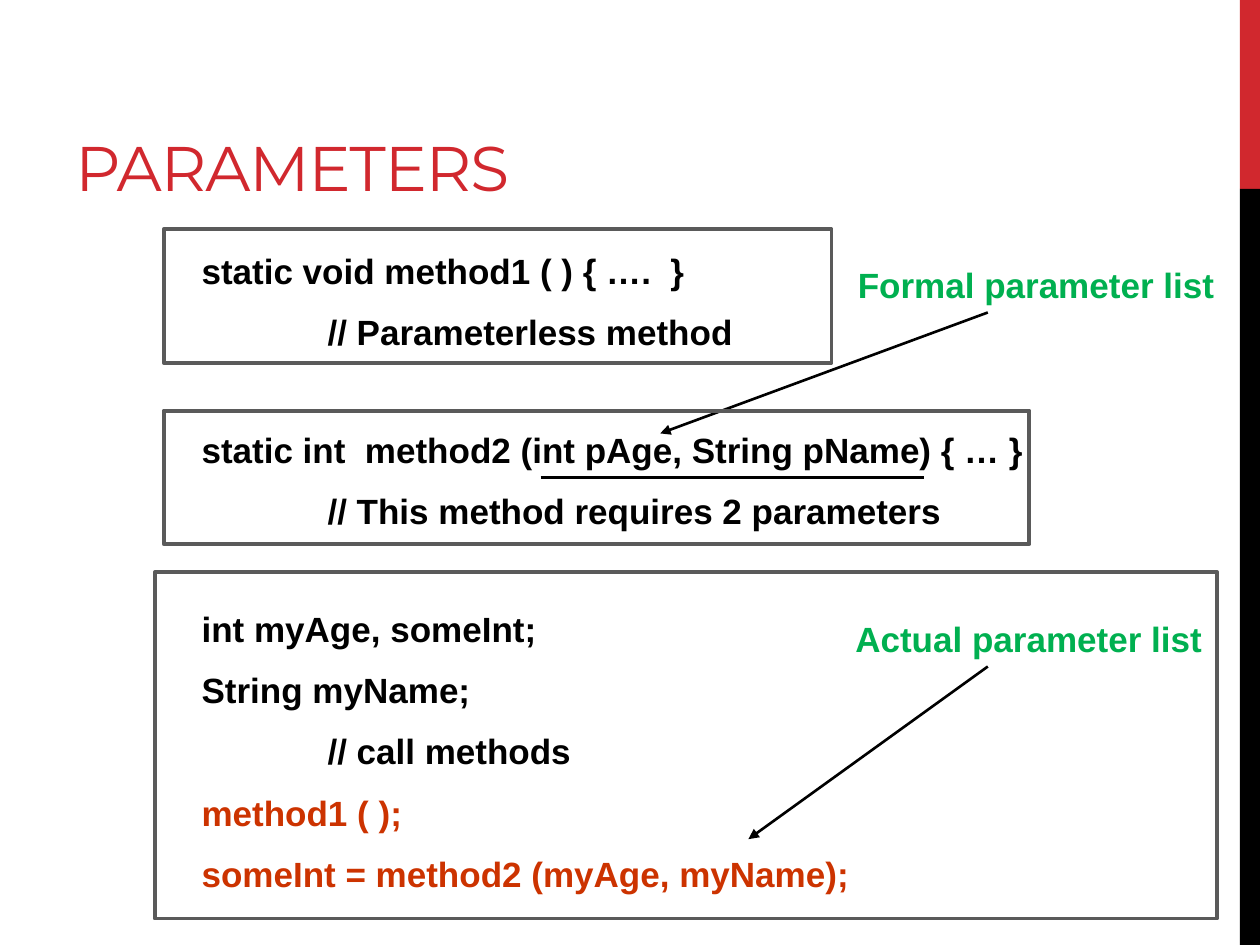
from lxml import etree
from pptx import Presentation
from pptx.dml.color import RGBColor
from pptx.enum.shapes import MSO_CONNECTOR, MSO_SHAPE
from pptx.enum.text import MSO_ANCHOR, PP_ALIGN
from pptx.oxml.ns import qn
from pptx.util import Inches, Pt

RECTANGLE = MSO_SHAPE.RECTANGLE
STRAIGHT = MSO_CONNECTOR.STRAIGHT
LEFT = PP_ALIGN.LEFT
TOP, BOTTOM = MSO_ANCHOR.TOP, MSO_ANCHOR.BOTTOM

RED = RGBColor(0xD1, 0x28, 0x2E)
BLACK = RGBColor(0x00, 0x00, 0x00)
GREEN = RGBColor(0x00, 0xB0, 0x50)
ORANGE = RGBColor(0xCC, 0x33, 0x00)
GRAY = RGBColor(0x5A, 0x5A, 0x5A)

COMMENT_INDENT = 1.0
CODE_LEFT = 1.6

# Each code line: text, indent in inches, colour
METHOD1 = [
    ("static void method1 ( ) { ….  }", 0, BLACK),
    ("// Parameterless method", COMMENT_INDENT, BLACK),
]
METHOD2 = [
    ("static int  method2 (int pAge, String pName) { … }", 0, BLACK),
    ("// This method requires 2 parameters", COMMENT_INDENT, BLACK),
]
CALLS = [
    ("int myAge, someInt;", 0, BLACK),
    ("String myName;", 0, BLACK),
    ("// call methods", COMMENT_INDENT, BLACK),
    ("method1 ( );", 0, ORANGE),
    ("someInt = method2 (myAge, myName);", 0, ORANGE),
]


def write(paragraph, text, size=20, font="Arial", color=BLACK, bold=True,
          indent=0, after=0, spacing=None):
    """Write one formatted run into a paragraph."""
    paragraph.alignment = LEFT
    paragraph.space_after = Pt(after)
    if indent:
        paragraph._p.get_or_add_pPr().set("marL", str(Inches(indent)))
    run = paragraph.add_run()
    run.text = text
    run.font.size = Pt(size)
    run.font.name = font
    run.font.bold = bold
    run.font.color.rgb = color
    if spacing is not None:
        run._r.get_or_add_rPr().set("spc", str(round(spacing * 100)))


def add_rectangle(slide, box, fill=None, line=None):
    rectangle = slide.shapes.add_shape(RECTANGLE, *map(Inches, box))
    rectangle.shadow.inherit = False
    if fill is None:
        rectangle.fill.background()
    else:
        rectangle.fill.solid()
        rectangle.fill.fore_color.rgb = fill
    if line is None:
        rectangle.line.fill.background()
    else:
        rectangle.line.color.rgb = line
        rectangle.line.width = Pt(2.25)
    return rectangle


def add_line(slide, start, end, arrow=False):
    line = slide.shapes.add_connector(STRAIGHT, *map(Inches, start + end))
    line.line.color.rgb = BLACK
    line.line.width = Pt(1.5)
    if arrow:
        etree.SubElement(line.line._get_or_add_ln(), qn("a:tailEnd"), type="triangle")
    etree.SubElement(line._element.spPr, qn("a:effectLst"))


def add_side_band(slide, box):
    """Red top fifth, black remainder."""
    left, top, width, height = box
    red_height = height / 5
    add_rectangle(slide, (left, top, width, red_height), fill=RED)
    add_rectangle(slide, (left, top + red_height, width, height - red_height), fill=BLACK)


def add_title(slide, box):
    frame = slide.shapes.add_textbox(*map(Inches, box)).text_frame
    frame.word_wrap = True
    frame.vertical_anchor = BOTTOM
    write(frame.paragraphs[0], "PARAMETERS", size=36, font="Montserrat",
          color=RED, bold=False, spacing=-0.6)


def add_callout(slide, box, text, target):
    """Green label with an arrow from its lower edge to the target."""
    left, top, width, height = box
    label = slide.shapes.add_textbox(*map(Inches, box)).text_frame
    label.word_wrap = False
    write(label.paragraphs[0], text, color=GREEN)
    add_line(slide, (7.84, top + height), target, arrow=True)


def add_code_panel(slide, box, lines, top_inset):
    """Outlined panel holding code lines on the shared left edge."""
    panel = add_rectangle(slide, box, line=GRAY).text_frame
    panel.word_wrap = True
    panel.vertical_anchor = TOP
    panel.margin_left = Inches(CODE_LEFT - box[0])
    panel.margin_top = Inches(top_inset)
    panel.margin_right = panel.margin_bottom = 0
    for number, (text, indent, color) in enumerate(lines):
        paragraph = panel.add_paragraph() if number else panel.paragraphs[0]
        write(paragraph, text, color=color, indent=indent, after=11)


def main():
    presentation = Presentation()
    presentation.slide_width = Inches(10)
    presentation.slide_height = Inches(7.5)
    slide = presentation.slides.add_slide(presentation.slide_layouts[6])

    add_side_band(slide, (9.84, 0, 0.16, 7.5))
    add_title(slide, (0.5, 0.17, 6.33, 1.5))

    # Labels and the underlined formal parameters
    add_callout(slide, (6.71, 2.04, 3.04, 0.44), "Formal parameter list", (5.24, 3.44))
    add_callout(slide, (6.69, 4.85, 2.97, 0.44), "Actual parameter list", (5.94, 6.66))
    add_line(slide, (4.29, 3.79), (7.33, 3.79))

    # Method declarations, then the calls
    add_code_panel(slide, (1.3, 1.82, 5.3, 1.06), METHOD1, 0.16)
    add_code_panel(slide, (1.3, 3.26, 6.87, 1.06), METHOD2, 0.14)
    add_code_panel(slide, (1.23, 4.54, 8.43, 2.75), CALLS, 0.28)

    presentation.save("out.pptx")


if __name__ == "__main__":
    main()
